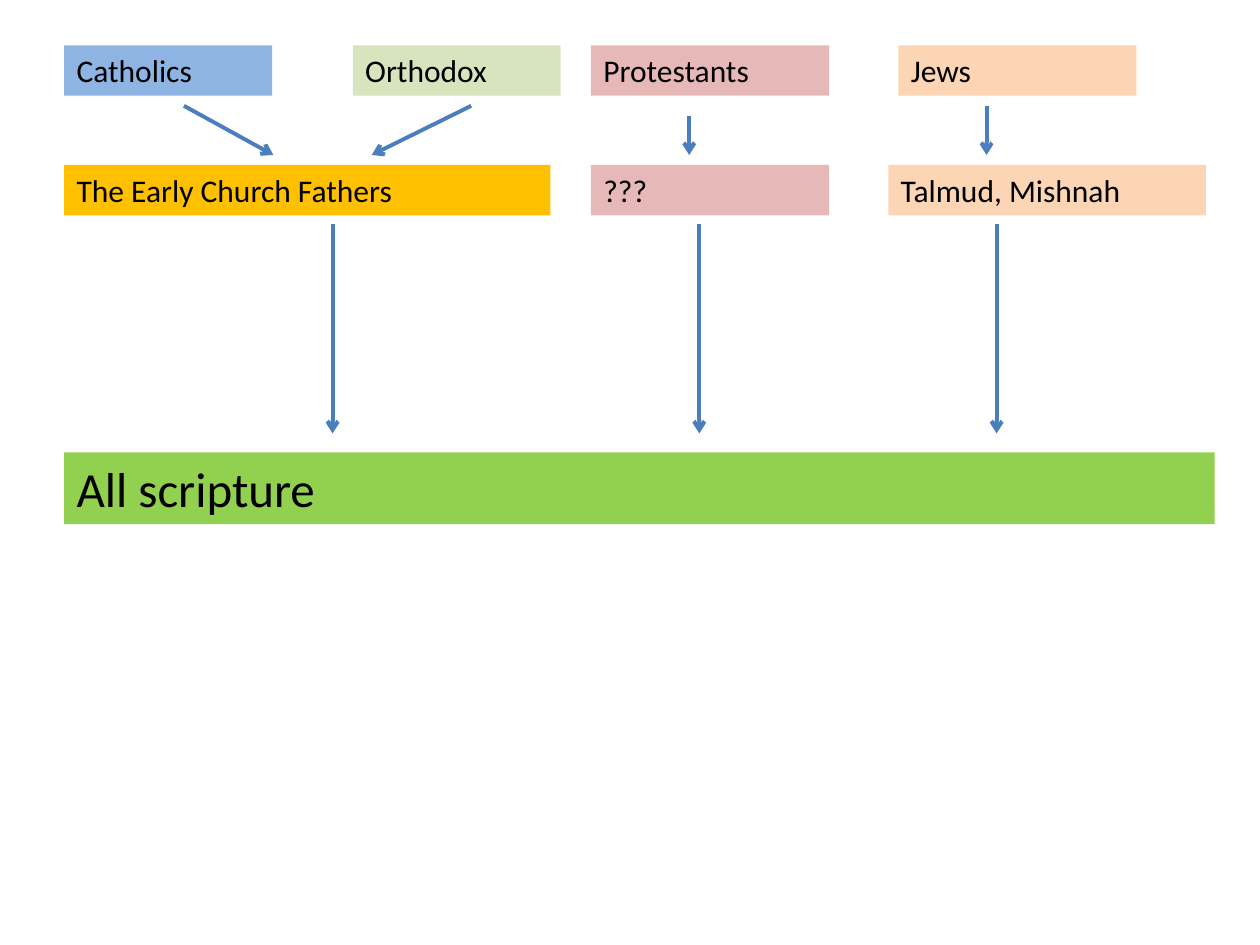
from pptx import Presentation
from pptx.dml.color import RGBColor
from pptx.enum.shapes import MSO_CONNECTOR as Connector, MSO_SHAPE as Shape
from pptx.enum.text import MSO_ANCHOR as Anchor, MSO_AUTO_SIZE as AutoSize, PP_ALIGN as Align
from pptx.oxml.ns import qn
from pptx.util import Inches, Pt
from lxml.etree import SubElement

LEFT, TRADITION_X, JEWISH_X = 0.51, 4.69, 7.05
GROUP_TOP, SOURCE_TOP, SCRIPTURE_TOP = 0.36, 1.31, 3.59
ROW_HEIGHT = 0.4
ROSE, PEACH = "E6B9B8", "FCD5B5"

# text, left, width, fill
GROUPS = [
    ("Catholics", LEFT, 1.65, "8EB4E3"),
    ("Orthodox", 2.8, 1.65, "D7E4BD"),
    ("Protestants", TRADITION_X, 1.89, ROSE),
    ("Jews", 7.13, 1.89, PEACH),
]
SOURCES = [
    ("The Early Church Fathers", LEFT, 3.86, "FFC000"),
    ("???", TRADITION_X, 1.89, ROSE),
    ("Talmud, Mishnah", JEWISH_X, 2.52, PEACH),
]
# start x, start y, end x
GROUP_ARROWS = [(1.46, 0.84, 2.17), (3.74, 0.84, 2.95), (5.47, 0.92, 5.47), (7.83, 0.84, 7.83)]
SOURCE_ARROWS = [2.64, 5.55, 7.91]


def color(value):
    return RGBColor.from_string(value)


def apply(target, formats):
    for name, value in formats.items():
        setattr(target, name, value)


class Diagram:
    font = {"name": "Calibri"}
    text_color = "000000"
    arrow_color = "4B7EBC"
    arrow_width = Pt(2.25)
    frame = {"word_wrap": True, "auto_size": AutoSize.SHAPE_TO_FIT_TEXT,
             "vertical_anchor": Anchor.TOP}

    def __init__(self, page):
        self.page = page

    def box(self, text, left, top, width, height, fill, size=18):
        box = self.page.shapes.add_shape(
            Shape.RECTANGLE, *map(Inches, (left, top, width, height)))
        box.shadow.inherit = False
        box.fill.solid()
        box.fill.fore_color.rgb = color(fill)
        box.line.fill.background()
        apply(box.text_frame, self.frame)
        para = box.text_frame.paragraphs[0]
        para.alignment = Align.LEFT
        span = para.add_run()
        span.text = text
        apply(span.font, {**self.font, "size": Pt(size)})
        span.font.color.rgb = color(self.text_color)

    def row(self, items, top):
        for text, left, width, fill in items:
            self.box(text, left, top, width, ROW_HEIGHT, fill)

    def arrow(self, start_x, start_y, end_x, end_y):
        arrow = self.page.shapes.add_connector(
            Connector.STRAIGHT, *map(Inches, (start_x, start_y, end_x, end_y)))
        arrow.line.width = self.arrow_width
        arrow.line.color.rgb = color(self.arrow_color)
        SubElement(arrow.line._get_or_add_ln(), qn("a:tailEnd"), type="arrow")
        SubElement(arrow._element.spPr, qn("a:effectLst"))


def main():
    deck = Presentation()
    apply(deck, {"slide_width": Inches(10), "slide_height": Inches(7.5)})
    diagram = Diagram(deck.slides.add_slide(deck.slide_layouts[6]))

    diagram.row(GROUPS, GROUP_TOP)
    diagram.row(SOURCES, SOURCE_TOP)
    for start_x, start_y, end_x in GROUP_ARROWS:
        diagram.arrow(start_x, start_y, end_x, 1.23)
    diagram.box("All scripture", LEFT, SCRIPTURE_TOP, 9.13, 0.57, "92D050", size=28)
    for x in SOURCE_ARROWS:
        diagram.arrow(x, 1.78, x, 3.44)

    deck.save("out.pptx")


if __name__ == "__main__":
    main()
